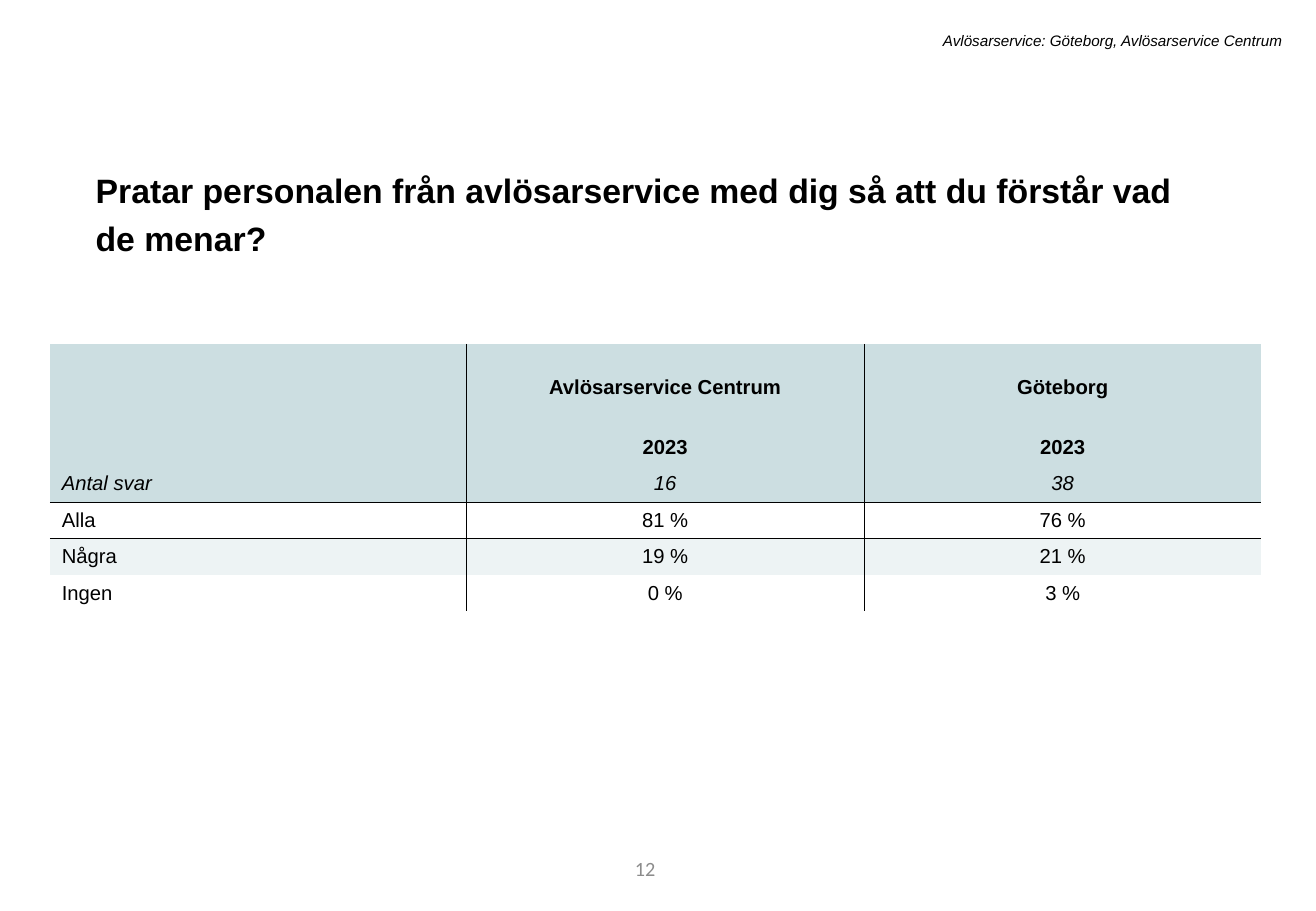
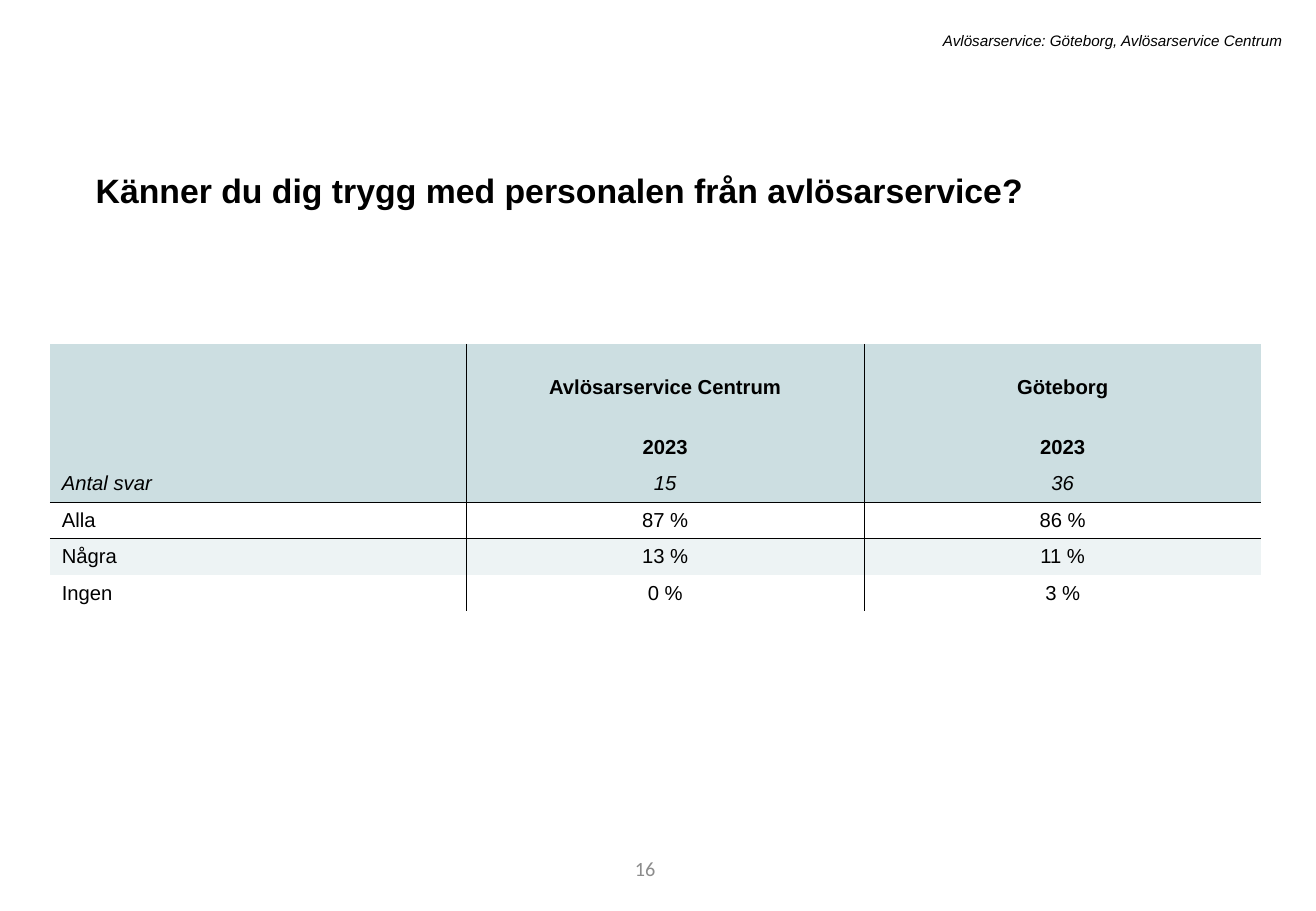
from lxml.etree import SubElement
from pptx import Presentation
from pptx.dml.color import RGBColor
from pptx.enum.text import MSO_ANCHOR, MSO_AUTO_SIZE, PP_ALIGN
from pptx.oxml.ns import qn
from pptx.util import Cm, Pt

BLACK = RGBColor(0x00, 0x00, 0x00)
GREY = RGBColor(0x8C, 0x8C, 0x8C)
HEADER_FILL = RGBColor(0xCC, 0xDE, 0xE1)
BAND_FILL = RGBColor(0xED, 0xF3, 0xF4)

NO_TABLE_STYLE = "{2D5ABB26-0587-4C30-8999-92F81FD0307C}"
BORDER_WIDTH = Pt(0.25)
COLUMN_WIDTHS = [Cm(8.71), Cm(8.31), Cm(8.31)]
ROW_HEIGHTS = [Cm(1.27)] * 2 + [Cm(0.76)] * 4
HEADER_ROWS = 3
COUNT_ROW = HEADER_ROWS - 1

REPORT_NAME = "Avlösarservice: Göteborg, Avlösarservice Centrum"
UNITS = ["Avlösarservice Centrum", "Göteborg"]
YEAR = "2023"
ANSWERS = ["Alla", "Några", "Ingen"]

QUESTIONS = [
    ("Pratar personalen från avlösarservice med dig så att du förstår vad de menar?",
     12, [16, 38], [(81, 76), (19, 21), (0, 3)]),
    ("Känner du dig trygg med personalen från avlösarservice?",
     16, [15, 36], [(87, 86), (13, 11), (0, 3)]),
]


def format_text(paragraph, size, color=BLACK, name="Arial", bold=False, italic=False):
    for run in paragraph.runs:
        font = run.font
        font.size, font.name = Pt(size), name
        font.bold, font.italic = bold, italic
        font.color.rgb = color


def add_text(slide, text, left, top, width, height, size,
             align=PP_ALIGN.LEFT, anchor=MSO_ANCHOR.TOP,
             fit=MSO_AUTO_SIZE.SHAPE_TO_FIT_TEXT, **style):
    frame = slide.shapes.add_textbox(Cm(left), Cm(top), Cm(width), Cm(height)).text_frame
    frame.text = text
    frame.word_wrap = True
    frame.auto_size = fit
    frame.vertical_anchor = anchor
    paragraph = frame.paragraphs[0]
    paragraph.alignment = align
    format_text(paragraph, size, **style)
    return paragraph


def add_title(slide, question):
    title = add_text(slide, question, 1.75, 3.25, 23.88, 1.19, 20, bold=True)
    title.line_spacing = 1.2
    title.space_before = Pt(10)


def add_report_name(slide):
    add_text(slide, REPORT_NAME, 4.55, 0.53, 22.5, 0.64, 9,
             align=PP_ALIGN.RIGHT, italic=True)


def add_page_number(slide, number):
    add_text(slide, str(number), 7.75, 17.65, 6.2, 1.02, 12, align=PP_ALIGN.RIGHT,
             anchor=MSO_ANCHOR.MIDDLE, fit=MSO_AUTO_SIZE.NONE, color=GREY, name="Calibri")


def set_borders(cell, sides):
    properties = cell._tc.get_or_add_tcPr()
    for position, side in enumerate(sides):
        line = SubElement(properties, qn(f"a:ln{side}"), w=str(BORDER_WIDTH))
        fill = SubElement(line, qn("a:solidFill"))
        SubElement(fill, qn("a:srgbClr"), val=str(BLACK))
        properties.insert(position, line)


def border_sides(row, column):
    rules = {
        "L": column > 0,
        "R": column < len(COLUMN_WIDTHS) - 1,
        "T": row == HEADER_ROWS,
        "B": row == COUNT_ROW,
    }
    return [side for side, drawn in rules.items() if drawn]


def fill_cell(cell, row):
    if row < HEADER_ROWS:
        color = HEADER_FILL
    elif (row - HEADER_ROWS) % 2:
        color = BAND_FILL
    else:
        cell.fill.background()
        return
    cell.fill.solid()
    cell.fill.fore_color.rgb = color


def format_cell(cell, text, row, column):
    cell.text = text
    cell.vertical_anchor = MSO_ANCHOR.BOTTOM if row < COUNT_ROW else MSO_ANCHOR.MIDDLE
    paragraph = cell.text_frame.paragraphs[0]
    paragraph.alignment = PP_ALIGN.CENTER if column else PP_ALIGN.LEFT
    format_text(paragraph, 12, bold=row < COUNT_ROW, italic=row == COUNT_ROW)
    fill_cell(cell, row)
    set_borders(cell, border_sides(row, column))


def add_answer_table(slide, counts, shares):
    content = [
        ["", *UNITS],
        ["", *[YEAR] * len(UNITS)],
        ["Antal svar", *map(str, counts)],
    ]
    content += [[answer, *(f"{share} %" for share in row)]
                for answer, row in zip(ANSWERS, shares)]
    table = slide.shapes.add_table(len(ROW_HEIGHTS), len(COLUMN_WIDTHS), Cm(1.04), Cm(7.19),
                                   sum(COLUMN_WIDTHS), sum(ROW_HEIGHTS)).table
    table._tbl.tblPr.find(qn("a:tableStyleId")).text = NO_TABLE_STYLE
    table.horz_banding = False
    for column, width in zip(table.columns, COLUMN_WIDTHS):
        column.width = width
    for row, height in zip(table.rows, ROW_HEIGHTS):
        row.height = height
    for row, texts in enumerate(content):
        for column, text in enumerate(texts):
            format_cell(table.cell(row, column), text, row, column)


def main():
    presentation = Presentation()
    presentation.slide_width = Cm(27.51)
    presentation.slide_height = Cm(19.05)
    blank = presentation.slide_layouts[6]
    for question, page, counts, shares in QUESTIONS:
        slide = presentation.slides.add_slide(blank)
        add_page_number(slide, page)
        add_title(slide, question)
        add_report_name(slide)
        add_answer_table(slide, counts, shares)
    presentation.save("out.pptx")


if __name__ == "__main__":
    main()
